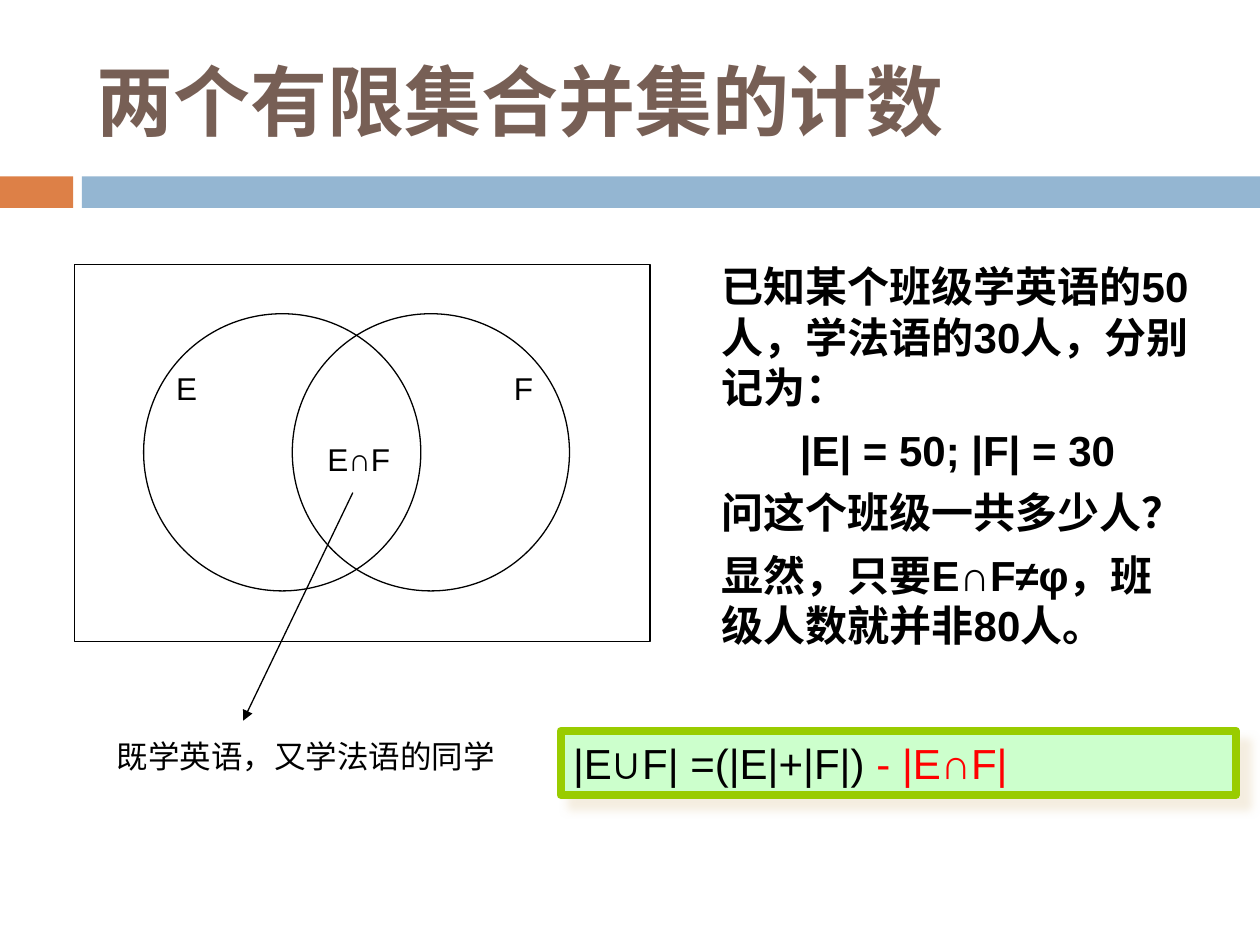
from lxml.etree import SubElement
from pptx import Presentation
from pptx.dml.color import RGBColor as RGB
from pptx.enum.shapes import MSO_CONNECTOR as CONN, MSO_SHAPE as SHAPE
from pptx.enum.text import MSO_ANCHOR as ANCHOR, MSO_AUTO_SIZE as FIT, PP_ALIGN as ALIGN
from pptx.oxml.ns import qn
from pptx.util import Inches, Pt

BLACK = RGB(0x00, 0x00, 0x00)
RED = RGB(0xFF, 0x00, 0x00)
BROWN = RGB(0x77, 0x5F, 0x55)
ORANGE = RGB(0xDD, 0x80, 0x47)
BLUE = RGB(0x94, 0xB6, 0xD2)
MINT = RGB(0xCC, 0xFF, 0xCC)
LIME = RGB(0x99, 0xCC, 0x00)
SAND = RGB(0xEB, 0xDD, 0xC3)

COLS, ROWS = 100, 75


class Board:
    """Draws on one slide; lengths are columns and rows of the grid."""
    font = "Arial"

    def __init__(self, prs):
        self.slide = prs.slides.add_slide(prs.slide_layouts[6])
        self.shapes = self.slide.shapes
        self.col = prs.slide_width / COLS
        self.row = prs.slide_height / ROWS

    def grid(self, *lengths):
        """Turn alternating columns and rows into EMU."""
        return [round(n * (self.row if i % 2 else self.col))
                for i, n in enumerate(lengths)]

    def shape(self, kind, box, fill=None, line=None, width=0.75):
        sp = self.shapes.add_shape(kind, *self.grid(*box))
        sp.shadow.inherit = False
        if fill is None:
            sp.fill.background()
        else:
            sp.fill.solid()
            sp.fill.fore_color.rgb = fill
        if line is None:
            sp.line.fill.background()
        else:
            sp.line.color.rgb = line
            sp.line.width = Pt(width)
        return sp

    def shadow(self, sp, color, alpha, blur, dist, angle):
        effects = sp._element.spPr.find(qn("a:effectLst"))
        outer = SubElement(effects, qn("a:outerShdw"), blurRad=str(Pt(blur)),
                           dist=str(Pt(dist)), dir=str(angle * 60000), algn="tl",
                           rotWithShape="0")
        clr = SubElement(outer, qn("a:srgbClr"), val=str(color))
        SubElement(clr, qn("a:alpha"), val=str(alpha * 1000))

    def arrow(self, start, end):
        cx = self.shapes.add_connector(CONN.STRAIGHT, *self.grid(*start, *end))
        cx.line.color.rgb = BLACK
        cx.line.width = Pt(0.75)
        SubElement(cx.line._get_or_add_ln(), qn("a:tailEnd"), type="triangle")
        SubElement(cx._element.spPr, qn("a:effectLst"))

    def fill_text(self, sp, paragraphs, size=18, bold=False, gap=0,
                  anchor=ANCHOR.TOP, fit=FIT.SHAPE_TO_FIT_TEXT):
        """Fill sp with (alignment, [(text, colour), ...]) paragraphs."""
        tf = sp.text_frame
        for name, value in dict(word_wrap=True, vertical_anchor=anchor,
                                auto_size=fit).items():
            setattr(tf, name, value)
        for i, (align, runs) in enumerate(paragraphs):
            p = tf.add_paragraph() if i else tf.paragraphs[0]
            p.alignment = align
            p.space_before = Pt(gap if i else 0)
            for text, color in runs:
                r = p.add_run()
                r.text = text
                r.font.color.rgb = color
                for name, value in dict(name=self.font, size=Pt(size),
                                        bold=bold).items():
                    setattr(r.font, name, value)

    def text(self, box, *lines, color=BLACK, **style):
        """Lines are strings, or (string, alignment) pairs."""
        pairs = [(s, ALIGN.LEFT) if isinstance(s, str) else s for s in lines]
        sp = self.shapes.add_textbox(*self.grid(*box))
        self.fill_text(sp, [(align, [(s, color)]) for s, align in pairs], **style)


def draw_header(board):
    board.shape(SHAPE.RECTANGLE, (0, 14, 5.8, 2.5), fill=ORANGE)
    board.shape(SHAPE.RECTANGLE, (6.5, 14, 93.5, 2.5), fill=BLUE)
    board.text((6.7, 2.5, 89.2, 10.8), "两个有限集合并集的计数", color=BROWN,
               size=44, bold=True, anchor=ANCHOR.MIDDLE, fit=FIT.NONE)


def draw_venn(board):
    for left in (11.4, 23.2):
        board.shape(SHAPE.OVAL, (left, 24.9, 22, 22), line=BLACK)
    board.shape(SHAPE.RECTANGLE, (5.9, 21, 45.7, 29.9), line=BLACK)
    board.arrow((28, 39.1), (19.3, 57.2))
    for label, left, top, width in (("既学英语，又学法语的同学", 8.3, 58, 44.1),
                                    ("E", 13, 28.8, 3.9),
                                    ("F", 39.8, 28.8, 4.7),
                                    ("E∩F", 25, 34.4, 8.7)):
        board.text((left, top, width, 4), label)


def draw_problem(board):
    board.text((56.3, 20.2, 39.4, 32.9),
               "已知某个班级学英语的50人，学法语的30人，分别记为：",
               ("|E| = 50; |F| = 30", ALIGN.CENTER),
               "问这个班级一共多少人？",
               "显然，只要E∩F≠φ，班级人数就并非80人。",
               size=24, bold=True, gap=7)


def draw_formula(board):
    sp = board.shape(SHAPE.RECTANGLE, (44.5, 58, 53.6, 5.1),
                     fill=MINT, line=LIME, width=4.5)
    board.shadow(sp, SAND, alpha=50, blur=5, dist=8.5, angle=45)
    board.fill_text(sp, [(ALIGN.LEFT, [("|E∪F| =(|E|+|F|) ", BLACK),
                                       ("- |E∩F|", RED)])], size=24)


def main():
    prs = Presentation()
    prs.slide_width, prs.slide_height = Inches(10), Inches(7.5)
    board = Board(prs)
    for draw in (draw_header, draw_venn, draw_problem, draw_formula):
        draw(board)
    prs.save("out.pptx")


if __name__ == "__main__":
    main()
